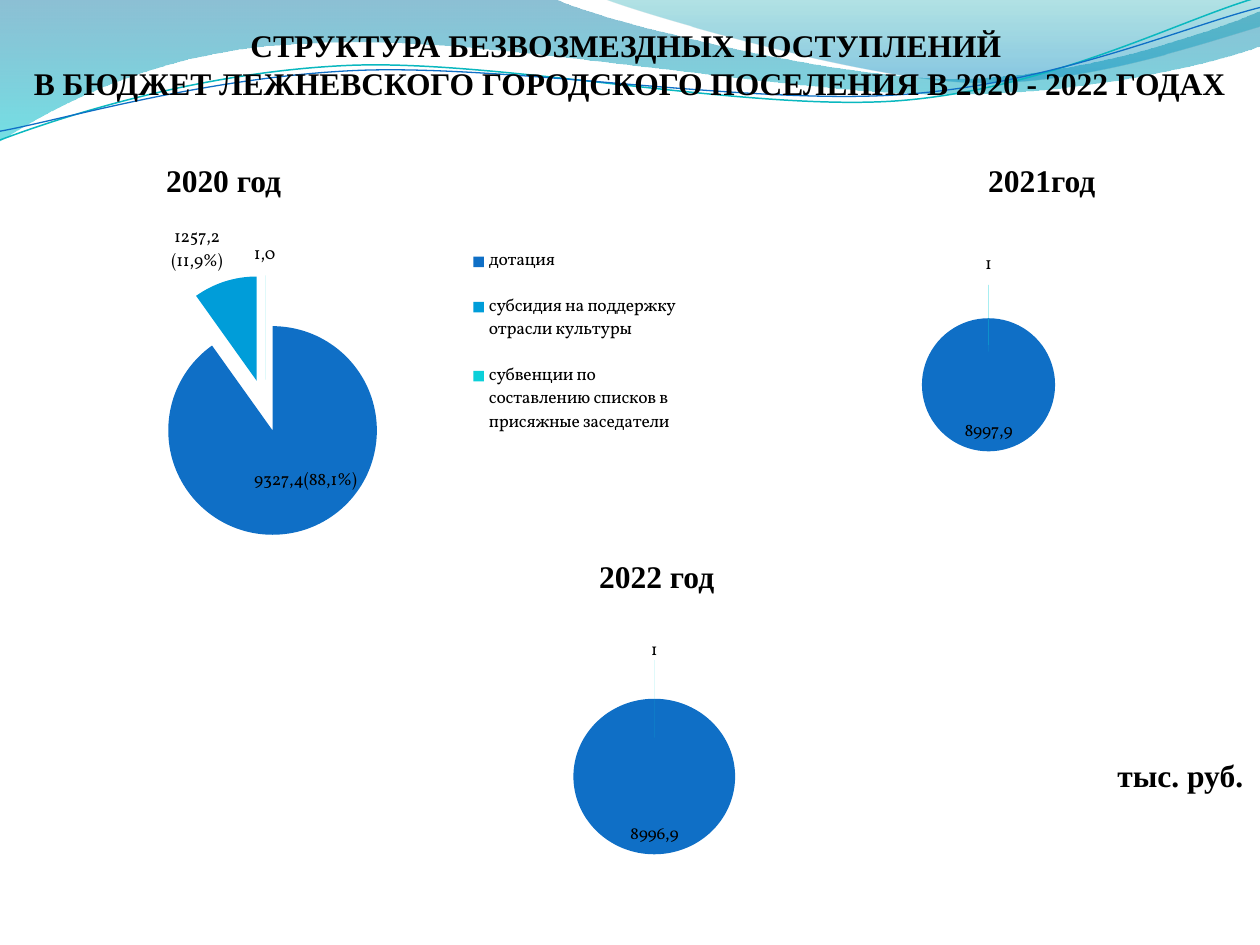
from lxml import etree
from pptx import Presentation
from pptx import util as u
from pptx.chart import data
from pptx.dml.color import RGBColor
from pptx.enum import chart as charts
from pptx.enum import text
from pptx.oxml.ns import qn

BLACK = RGBColor(0x00, 0x00, 0x00)
BLUE = RGBColor(0x0F, 0x6F, 0xC6)
SKY = RGBColor(0x00, 0x9D, 0xD9)
CYAN = RGBColor(0x0B, 0xD0, 0xD9)
TEAL = RGBColor(0x0A, 0xB8, 0xBF)
DEEP_BLUE = RGBColor(0x00, 0x74, 0xA1)
AQUA = RGBColor(0x00, 0xC6, 0xCF)
DARK_TEAL = RGBColor(0x00, 0xA1, 0xA9)
OCEAN = RGBColor(0x00, 0x8B, 0xBF)

CENTER = charts.XL_LABEL_POSITION.CENTER
INSIDE = charts.XL_LABEL_POSITION.INSIDE_END
OUTSIDE = charts.XL_LABEL_POSITION.OUTSIDE_END


def bend(shape, steps):
    lines = iter(list(shape.element.iter(qn("a:lnTo"))))
    for step in steps:
        first = next(lines)
        if len(step) == 2:
            continue
        cubic = etree.Element(qn("a:cubicBezTo"))
        first.addprevious(cubic)
        for line in (first, next(lines), next(lines)):
            cubic.append(line[0])
            line.getparent().remove(line)


def set_layout(parent, index, percents):
    for old in parent.findall(qn("c:layout")):
        parent.remove(old)
    layout = etree.Element(qn("c:layout"))
    manual = etree.SubElement(layout, qn("c:manualLayout"))
    entries = [(name, value / 100) for name, value in zip("xywh", percents)]
    if len(percents) == 4:
        entries = [("xMode", "edge"), ("yMode", "edge"), *entries]
    if parent.tag == qn("c:plotArea"):
        entries.insert(0, ("layoutTarget", "inner"))
    for name, value in entries:
        etree.SubElement(manual, qn(f"c:{name}")).set("val", str(value))
    parent.insert(index, layout)


class Painter:
    heading_font = "Times New Roman"
    chart_font = "Vollkorn"

    def __init__(self, page):
        self.page = page

    def outline(self, start, steps, close):
        corners = [(u.Pt(x), u.Pt(y)) for step in steps
                   for x, y in zip(step[::2], step[1::2])]
        builder = self.page.shapes.build_freeform(*map(u.Pt, start))
        builder.add_line_segments(corners, close=close)
        shape = builder.convert_to_shape()
        bend(shape, steps)
        shape.shadow.inherit = False
        return shape

    def wave(self, start, steps, stops):
        shape = self.outline(start, steps, True)
        shape.line.fill.background()
        shape.fill.gradient()
        shape.fill.gradient_angle = 270
        for stop, (position, color, _) in zip(shape.fill.gradient_stops, stops):
            stop.position = position
            stop.color.rgb = color
        for tint, (_, _, opacity) in zip(shape.element.spPr.iter(qn("a:srgbClr")), stops):
            etree.SubElement(tint, qn("a:alpha")).set("val", str(opacity * 1000))

    def curve(self, start, steps, color, width):
        shape = self.outline(start, steps, False)
        shape.fill.background()
        shape.line.color.rgb = color
        shape.line.width = u.Pt(width)

    def heading(self, area, lines, align=text.PP_ALIGN.CENTER, wrap=True):
        box = self.page.shapes.add_textbox(*map(u.Pt, area))
        box.text_frame.word_wrap = wrap
        para = box.text_frame.paragraphs[0]
        para.alignment = align
        for index, line in enumerate(lines):
            if index:
                para.add_line_break()
            span = para.add_run()
            span.text = line
            span.font.name = self.heading_font
            span.font.size = u.Pt(18)
            span.font.bold = True
            span.font.color.rgb = BLACK

    def style_font(self, font):
        font.name = self.chart_font
        font.size = u.Pt(10)
        font.color.rgb = BLACK

    def label(self, series, index, lines, position, shift=None):
        label = series.points[index].data_label
        frame = label.text_frame
        for number, line in enumerate(lines):
            para = frame.add_paragraph() if number else frame.paragraphs[0]
            span = para.add_run()
            span.text = line
            self.style_font(span.font)
        label.position = position
        if shift:
            entry = series._element.findall(".//" + qn("c:dLbl"))[index]
            set_layout(entry, 1, shift)

    def pie(self, area, categories, values, labels, plot_area, legend_area=None):
        table = data.CategoryChartData()
        table.categories = categories
        table.add_series("Series 1", values)
        chart = self.page.shapes.add_chart(
            charts.XL_CHART_TYPE.PIE, *map(u.Pt, area), table).chart
        self.style_font(chart.font)
        chart.has_title = False
        chart.has_legend = legend_area is not None
        if legend_area:
            chart.legend.position = charts.XL_LEGEND_POSITION.RIGHT
            chart.legend.include_in_layout = False
            self.style_font(chart.legend.font)
            set_layout(chart.element.find(".//" + qn("c:legend")), 1, legend_area)
        set_layout(chart.element.find(".//" + qn("c:plotArea")), 0, plot_area)

        plot = chart.plots[0]
        plot.vary_by_categories = True
        series = plot.series[0]
        explosion = etree.Element(qn("c:explosion"))
        explosion.set("val", "25")
        series._element.find(qn("c:tx")).addnext(explosion)
        for index, color in enumerate((BLUE, SKY, CYAN)):
            fill = series.points[index].format.fill
            fill.solid()
            fill.fore_color.rgb = color
        series.data_labels.show_value = True
        series.data_labels.position = OUTSIDE
        self.style_font(series.data_labels.font)
        for index, details in enumerate(labels):
            self.label(series, index, *details)


def main():
    deck = Presentation()
    deck.slide_width, deck.slide_height = u.Pt(720), u.Pt(540)
    painter = Painter(deck.slides.add_slide(deck.slide_layouts[6]))

    painter.wave((0, 0), [
        (317, -0.7), (343, 12, 478, 45, 546, 45), (614, 45, 690, 19, 720, 6.5),
        (721, 26), (708, 32, 626, 55, 537, 54), (448, 54, 275, 20, 185, 24.5),
        (93, 26, 33, 60, -0.7, 81), (0, 0),
    ], [(0, DEEP_BLUE, 45), (1, AQUA, 55)])
    painter.wave((345, -0.7), [
        (366.5, 8, 491, 44.6, 553.7, 46.8), (616, 49.7, 692, 23, 720, 15),
        (720, 0), (345, -0.7),
    ], [(0, DARK_TEAL, 30), (0.8, OCEAN, 45)])
    painter.curve((0, 80), [
        (34.6, 67, 113.8, 41, 199.4, 37.4), (284.4, 33.8, 427, 64, 513.4, 57.6),
        (599.8, 51, 675.4, 10.8, 718.6, -1.4),
    ], TEAL, 0.85)
    painter.curve((0, 75), [
        (33.8, 69, 118, 44, 203.8, 40.3), (290, 36.7, 430, 60.5, 516, 54),
        (602, 48, 677.5, 15, 720, 4.3),
    ], BLUE, 0.75)

    painter.heading((0, 11.5, 720, 51), [
        "СТРУКТУРА БЕЗВОЗМЕЗДНЫХ ПОСТУПЛЕНИЙ ",
        "В БЮДЖЕТ ЛЕЖНЕВСКОГО ГОРОДСКОГО ПОСЕЛЕНИЯ В 2020 - 2022 ГОДАХ"])
    painter.heading((281, 315, 193, 29), ["2022 год "])
    painter.heading((496, 88.6, 198.7, 29), ["2021год"])
    painter.heading((87.8, 88.6, 85, 29), ["2020 год"], text.PP_ALIGN.LEFT)
    painter.heading((631, 428.4, 87, 29), ["тыс. руб."], wrap=False)

    painter.pie(
        (16.6, 118, 390.2, 198),
        ["дотация", "субсидия на поддержку отрасли культуры",
         "субвенции по составлению списков в присяжные заседатели"],
        [10121.1, 1106.5, 0.4],
        [(["9327,4(88,1%)"], CENTER, (2.5, 0.4)),
         (["1257,2", "(11,9%)"], OUTSIDE), (["1,0"], OUTSIDE)],
        (15.4, 19.5, 38.2, 76), (63.6, 6.3, 32.6, 66))
    years = ["1", "2", "3"]
    painter.pie((427.7, 134.6, 275, 150.5), years, [8997.9, None, 1],
                [(["8997,9"], INSIDE)], (32.6, 18.4, 34.6, 64))
    painter.pie((219.6, 360, 270, 157.7), years, [8997.9, None, 1],
                [(["8996,9"], INSIDE)], (17.9, 7.3, 78.5, 73.3))
    deck.save("out.pptx")


if __name__ == "__main__":
    main()
